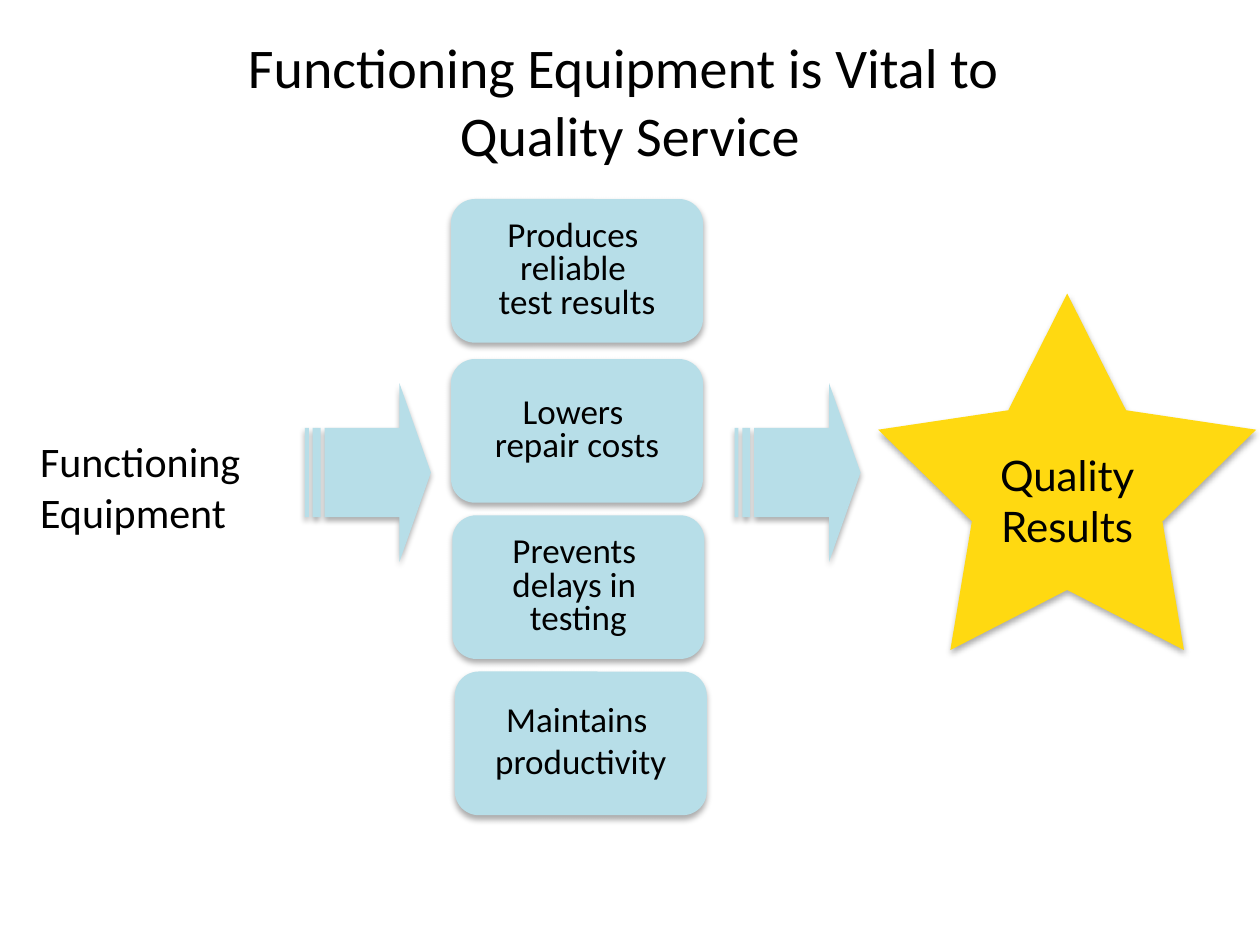
from dataclasses import dataclass

from lxml import etree
from pptx import Presentation
from pptx.dml.color import RGBColor
from pptx.enum.shapes import MSO_SHAPE
from pptx.enum.text import MSO_ANCHOR, PP_ALIGN
from pptx.oxml.ns import qn
from pptx.util import Inches, Pt

ROUNDED = MSO_SHAPE.ROUNDED_RECTANGLE
STRIPED_ARROW = MSO_SHAPE.STRIPED_RIGHT_ARROW
STAR = MSO_SHAPE.STAR_5_POINT
MIDDLE = MSO_ANCHOR.MIDDLE
CENTER = PP_ALIGN.CENTER
LEFT = PP_ALIGN.LEFT


@dataclass(frozen=True)
class Theme:
    ink: RGBColor = RGBColor(0x00, 0x00, 0x00)
    pale_blue: RGBColor = RGBColor(0xB7, 0xDE, 0xE8)
    gold: RGBColor = RGBColor(0xFF, 0xD9, 0x11)
    font: str = "Calibri"
    star_font: str = "Lato"
    title_size: int = 32
    label_size: int = 24
    benefit_size: int = 20


class SlideBuilder:
    def __init__(self, slide, theme):
        self.slide = slide
        self.theme = theme

    def set_text(self, shape, text, size, font=None, align=CENTER, spacing=None, after=None, wrap=False):
        text_frame = shape.text_frame
        text_frame.word_wrap = wrap
        text_frame.text = text
        for paragraph in text_frame.paragraphs:
            paragraph.alignment = align
            paragraph.line_spacing = spacing
            paragraph.space_after = after
            for run in paragraph.runs:
                run.font.name = font or self.theme.font
                run.font.size = Pt(size)
                run.font.color.rgb = self.theme.ink

    def add_shadow(self, shape):
        shape.shadow.inherit = False
        effects = shape._element.spPr.find(qn("a:effectLst"))
        shadow = etree.SubElement(
            effects, qn("a:outerShdw"), blurRad=str(Pt(3.5)),
            dist=str(Pt(2.2)), dir="5400000", rotWithShape="0")
        color = etree.SubElement(shadow, qn("a:srgbClr"), val=str(self.theme.ink))
        etree.SubElement(color, qn("a:alpha"), val="32000")

    def add_figure(self, kind, left, top, width, height, fill, adjustments):
        shape = self.slide.shapes.add_shape(
            kind, Inches(left), Inches(top), Inches(width), Inches(height))
        for index, value in enumerate(adjustments):
            shape.adjustments[index] = value
        shape.fill.solid()
        shape.fill.fore_color.rgb = fill
        shape.line.fill.background()
        self.add_shadow(shape)
        shape.text_frame.vertical_anchor = MIDDLE
        return shape

    def add_text(self, left, top, width, height):
        return self.slide.shapes.add_textbox(
            Inches(left), Inches(top), Inches(width), Inches(height))

    def add_title(self, text):
        title = self.add_text(0, 0.18, 10, 1.07)
        self.set_text(title, text, self.theme.title_size, wrap=True)
        text_frame = title.text_frame
        text_frame.vertical_anchor = MIDDLE
        text_frame.margin_left = text_frame.margin_right = text_frame.margin_top = Inches(0.16)
        text_frame.margin_bottom = 0

    def add_label(self, text):
        label = self.add_text(0.22, 3.41, 1.84, 0.91)
        self.set_text(label, text, self.theme.label_size, align=LEFT)

    def add_benefit(self, left, top, text, after):
        box = self.add_figure(ROUNDED, left, top, 2, 1.14, self.theme.pale_blue, [0.167])
        self.set_text(box, text, self.theme.benefit_size, spacing=0.8, after=after)

    def add_arrow(self, left):
        self.add_figure(STRIPED_ARROW, left, 3.04, 1, 1.42, self.theme.pale_blue, [0.5, 0.25])

    def add_star(self, text):
        star = self.add_figure(STAR, 6.97, 2.33, 3, 2.83, self.theme.gold, [0.252])
        self.set_text(star, text, self.theme.label_size, self.theme.star_font)


BENEFITS = [
    (3.58, 1.58, "Produces \nreliable \ntest results", None),
    (3.58, 2.85, "Lowers \nrepair costs", None),
    (3.59, 4.09, "Prevents \ndelays in \ntesting", None),
    (3.61, 5.33, "Maintains \nproductivity", Pt(5)),
]


def main():
    presentation = Presentation()
    presentation.slide_width = Inches(10)
    presentation.slide_height = Inches(7.5)
    slide = presentation.slides.add_slide(presentation.slide_layouts[6])
    builder = SlideBuilder(slide, Theme())

    builder.add_title("Functioning Equipment is Vital to \vQuality Service")
    for benefit in BENEFITS:
        builder.add_benefit(*benefit)
    builder.add_arrow(5.83)
    builder.add_star("Quality\nResults")
    builder.add_arrow(2.42)
    builder.add_label("Functioning\nEquipment")

    presentation.save("out.pptx")


if __name__ == "__main__":
    main()
